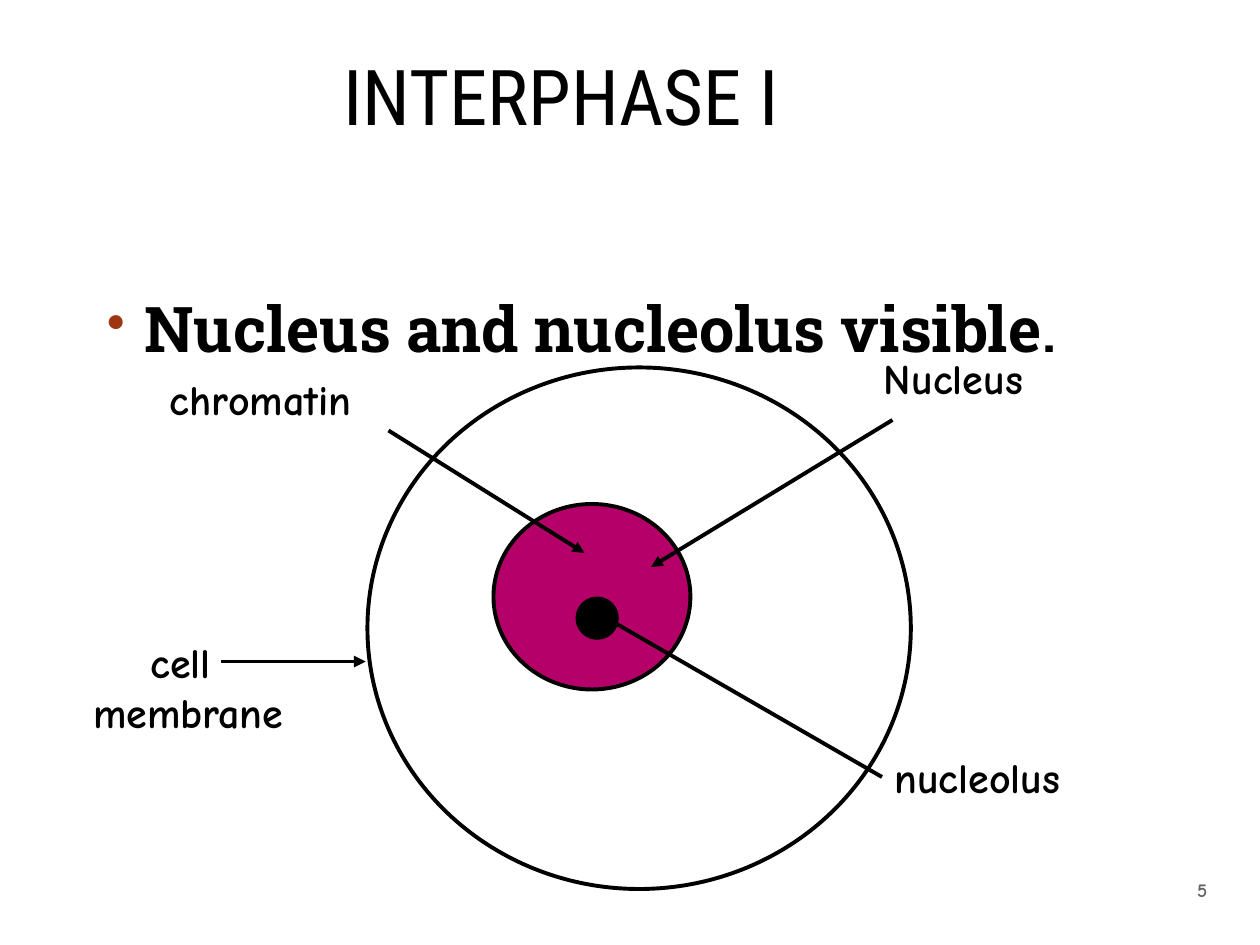
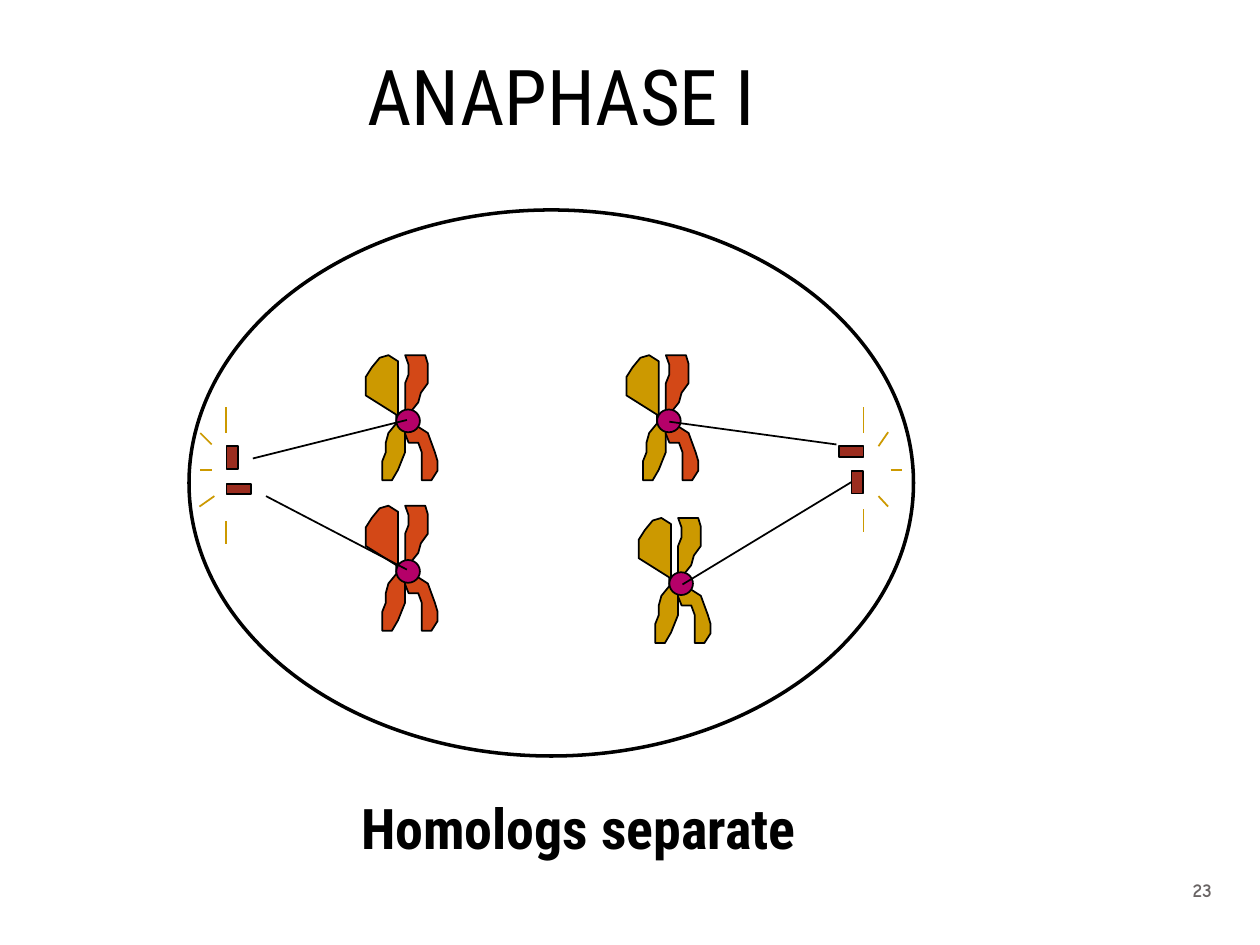
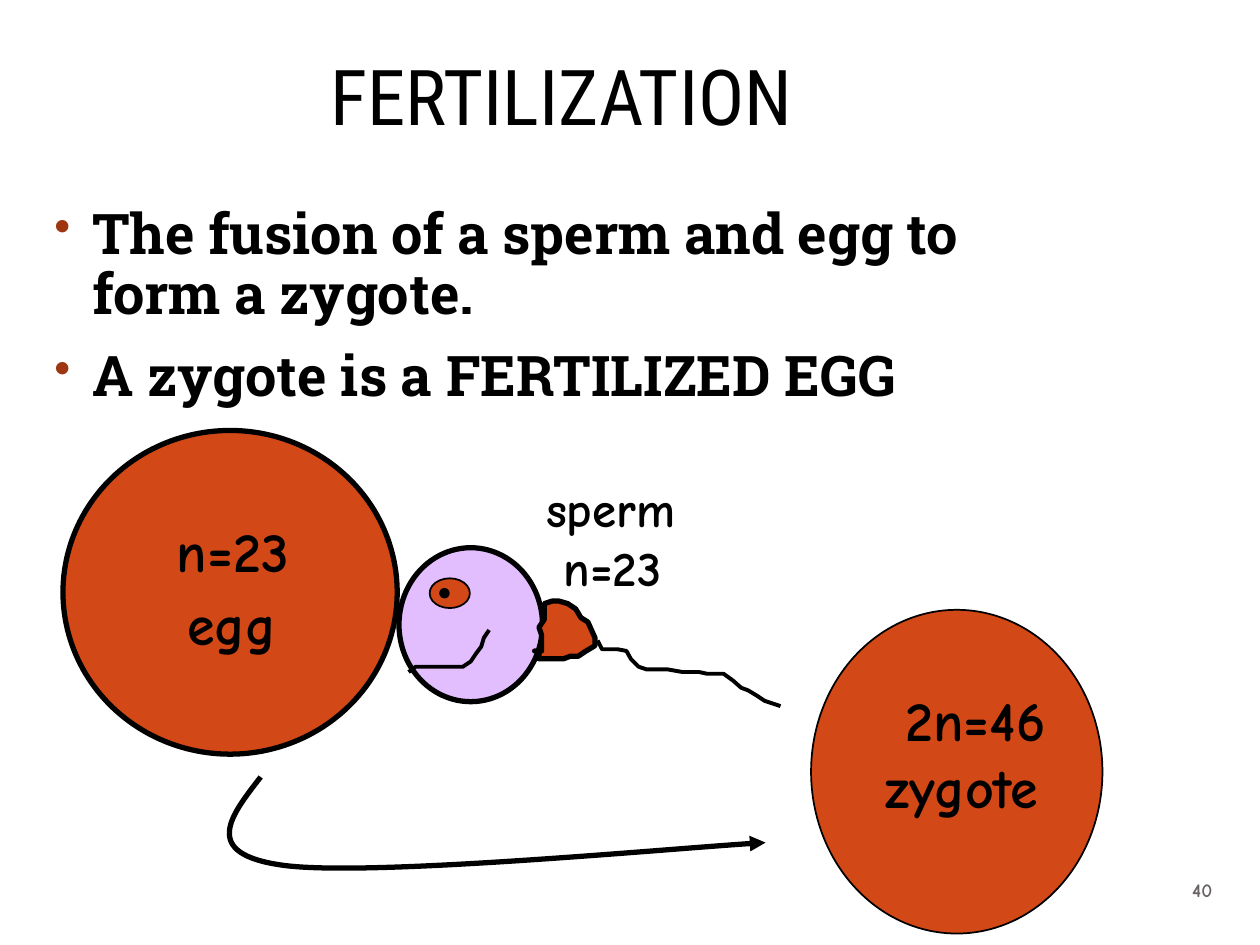
from lxml.etree import SubElement as Sub
from pptx import Presentation
from pptx.dml.color import RGBColor as Rgb
from pptx.enum.shapes import MSO_CONNECTOR as Link, MSO_SHAPE as Kind
from pptx.enum.text import MSO_ANCHOR as Anchor, MSO_AUTO_SIZE as Fit, PP_ALIGN as Align
from pptx.oxml.ns import qn
from pptx.util import Pt

HUES = {
    "black": "000000",
    "white": "FFFFFF",
    "gray": "696464",
    "rust": "9E3611",
    "brick": "9B2D1F",
    "orange": "D34817",
    "gold": "CC9900",
    "plum": "B50069",
    "lilac": "E3BEFF",
}
HEAD, BODY, NOTE = "Roboto Condensed", "Roboto Slab", "Comic Neue"

# Chromatid outlines, measured from the chromosome's top left corner
LEFT = [(24.5, 37.5), (18.5, 35.5), (18.5, 3.5), (13, 0), (8, 1.5), (3.5, 7),
        (0, 12.5), (0, 23), (17.5, 34), (17.5, 39), (13, 44.5), (11.5, 50),
        (11.5, 55.5), (9.5, 60.5), (9.5, 71.5), (15, 71.5), (18.5, 65.5),
        (20.5, 60.5), (22.5, 55.5), (22.5, 39)]
RIGHT = [(24.5, 37.5), (22.5, 32), (22.5, 16), (24.5, 11), (24.5, 5.5),
         (22.5, 0), (34, 0), (35.5, 5), (35.5, 16), (31.5, 21.5), (30, 27),
         (26, 32), (24.5, 37.5), (35.5, 44.5), (37.5, 50), (39.5, 55.5),
         (41, 60.5), (41, 66), (37.5, 71.5), (32, 71.5), (32, 55.5),
         (30, 50), (24.5, 50), (22.5, 45), (22.5, 39)]


def hue(name):
    return Rgb.from_string(HUES[name])


def style(shape, fill, width):
    shape.shadow.inherit = False
    if fill:
        shape.fill.solid()
        shape.fill.fore_color.rgb = hue(fill)
    else:
        shape.fill.background()
    shape.line.color.rgb = hue("black")
    shape.line.width = Pt(width)
    return shape


def add_tip(shape):
    Sub(shape.line._get_or_add_ln(), qn("a:tailEnd"), type="triangle")


def add_dot(para):
    """Give a paragraph a hanging round bullet."""
    props = para._p.get_or_add_pPr()
    props.set("marL", str(Pt(21.6)))
    props.set("indent", str(-Pt(21.6)))
    Sub(Sub(props, qn("a:buClr")), qn("a:srgbClr"), val=HUES["rust"])
    Sub(props, qn("a:buSzPct"), val="85000")
    Sub(props, qn("a:buChar"), char="•")


def add_text(slide, box, lines, face, size, bold=True, color="black",
             align=Align.LEFT, anchor=Anchor.TOP, wrap=True, dots=False,
             space=None):
    frame = slide.shapes.add_textbox(*map(Pt, box)).text_frame
    frame.word_wrap = wrap
    frame.auto_size = Fit.NONE if wrap else Fit.SHAPE_TO_FIT_TEXT
    frame.vertical_anchor = anchor
    for i, line in enumerate(lines):
        para = frame.add_paragraph() if i else frame.paragraphs[0]
        para.text = line
        para.alignment = align
        if space:
            para.line_spacing = space
        if dots:
            if i:
                para.space_before = Pt(12)
            add_dot(para)
        font = para.font
        font.name, font.size, font.bold = face, Pt(size), bold
        font.color.rgb = hue(color)
    return frame


def add_label(slide, box, *lines, size=24, **look):
    add_text(slide, box, lines, NOTE, size, wrap=False, **look)


def add_list(slide, box, lines, size):
    return add_text(slide, box, lines, BODY, size, dots=True, space=0.9)


def add_form(slide, kind, box, fill, width=1):
    return style(slide.shapes.add_shape(kind, *map(Pt, box)), fill, width)


def add_oval(slide, box, fill, width=1):
    return add_form(slide, Kind.OVAL, box, fill, width)


def add_path(slide, dots, fill=None, width=1, at=(0, 0)):
    """Draw an outline through dots; it is closed when it has a fill."""
    spots = [(Pt(x + at[0]), Pt(y + at[1])) for x, y in dots]
    pen = slide.shapes.build_freeform(*spots[0])
    pen.add_line_segments(spots[1:], close=bool(fill))
    return style(pen.convert_to_shape(), fill, width)


def add_curve(slide, dots, width):
    """Draw Bezier curves: a start, then three dots for each curve."""
    shape = add_path(slide, dots, width=width)
    steps = list(shape._element.iter(qn("a:lnTo")))
    for i in range(0, len(steps), 3):
        bend = Sub(steps[i].getparent(), qn("a:cubicBezTo"))
        for step in steps[i:i + 3]:
            bend.append(step[0])
            step.getparent().remove(step)
    return shape


def add_line(slide, ends, color="black", width=1, tip=False):
    line = slide.shapes.add_connector(Link.STRAIGHT, *map(Pt, ends))
    line.line.color.rgb = hue(color)
    line.line.width = Pt(width)
    if tip:
        add_tip(line)
    Sub(line._element.spPr, qn("a:effectLst"))
    return line


def add_pair(slide, x, y, left, right):
    """Draw a chromosome: two chromatids joined by a centromere."""
    add_path(slide, LEFT, left, at=(x, y))
    add_path(slide, RIGHT, right, at=(x, y))
    add_oval(slide, (x + 17.5, y + 31, 13.5, 13), "plum")


def add_page(deck, title, number):
    slide = deck.slides.add_slide(deck.slide_layouts[6])
    add_text(slide, (36, 25, 570, 65), [title], HEAD, 44, bold=False,
             align=Align.CENTER, anchor=Anchor.MIDDLE, space=0.9)
    add_text(slide, (668, 494, 38, 29), [str(number)], NOTE, 11, color="gray",
             align=Align.CENTER, anchor=Anchor.MIDDLE)
    return slide


def draw_inter(deck):
    slide = add_page(deck, "INTERPHASE I", 5)
    frame = add_list(slide, (54, 167, 612, 319),
                     ["Nucleus and nucleolus visible"], 36)
    stop = frame.paragraphs[0].add_run()
    stop.text = "."
    stop.font.size = Pt(30)
    add_oval(slide, (210, 210, 310.5, 298), "white", 2.25)
    add_oval(slide, (282, 288, 112.5, 106), "plum", 2.25)
    add_oval(slide, (330, 342, 22.5, 22.5), "black", 2.25)
    add_label(slide, (498, 198, 157, 36), "Nucleus")
    add_label(slide, (504, 426, 116, 36), "nucleolus")
    add_label(slide, (42, 360, 131, 65.5), "cell \vmembrane", align=Align.CENTER)
    add_label(slide, (90, 210, 128, 36), "chromatin")
    for ends in [(126, 378, 209, 378), (510, 240, 372, 324),
                 (222, 246, 334, 316)]:
        add_line(slide, ends, width=2.25, tip=True)
    add_line(slide, (348, 354, 504, 444), width=2.25)


def draw_ana(deck):
    slide = add_page(deck, "ANAPHASE I", 23)
    add_oval(slide, (108, 120, 414, 312), "white", 2)
    poles = [add_form(slide, Kind.RECTANGLE, box, "brick") for box in [
        (129.5, 255, 6.5, 13), (129.5, 276.5, 14, 6),
        (479.5, 255, 14, 6), (486.5, 269, 6.5, 13)]]
    for ends in [
            (122.5, 283.5, 114, 289.5), (114.5, 268.5, 121, 268.5),
            (114.5, 247.5, 121, 254), (129, 247.5, 129, 232.5),
            (129, 298, 129, 311), (493.5, 247.5, 493.5, 232.5),
            (502, 255, 507.5, 247), (509, 268.5, 515.5, 268.5),
            (502, 283.5, 507.5, 289.5), (493.5, 291, 493.5, 304)]:
        add_line(slide, ends, "gold")
    for x, y, left, right in [
            (209, 203, "gold", "orange"), (358, 203, "gold", "orange"),
            (209, 289, "orange", "orange"), (365, 296, "gold", "gold")]:
        add_pair(slide, x, y, left, right)
    for ends in [(144.5, 262, 232.5, 240), (152, 283.5, 232.5, 325.5),
                 (382.5, 241, 478, 254)]:
        add_line(slide, ends)
    add_line(slide, (390, 334, 486.5, 275.5)).end_connect(poles[3], 1)
    add_text(slide, (48, 450, 558, 46), [" Homologs separate"], HEAD, 32,
             align=Align.CENTER)


def draw_fert(deck):
    slide = add_page(deck, "FERTILIZATION", 40)
    add_list(slide, (24, 114, 588, 366),
             ["The fusion of a sperm and egg to form a zygote.",
              "A zygote is a FERTILIZED EGG"], 32)
    # Egg
    add_oval(slide, (36, 246, 191, 185), "orange", 3)
    add_label(slide, (94, 291.5, 91, 46), "n=23", size=32)
    add_label(slide, (100, 333.5, 67, 46), "egg", size=32)
    # Sperm: head, neck, tail, eye and mouth
    add_oval(slide, (228, 313, 82, 88), "lilac", 3)
    add_label(slide, (305, 270, 99, 74), "sperm", " n=23", size=28)
    add_path(slide, [
        (305.5, 372), (309.5, 372), (309.5, 363), (308, 358.5), (311, 354),
        (311, 345), (315.5, 343.5), (319.5, 343.5), (324.5, 345),
        (329, 348), (332, 353), (336, 355.5), (338, 360), (340, 364.5),
        (340, 369), (335, 372), (330.5, 375), (326, 375), (322, 376.5),
        (308, 376.5), (308, 372)], "orange", 3)
    add_path(slide, [
        (341.5, 366), (344, 371), (353, 371), (358, 372), (360.5, 376.5),
        (365, 381), (369.5, 382.5), (381.5, 382.5), (390, 384),
        (399.5, 384), (404, 385), (413.5, 385), (419, 389), (423.5, 393),
        (427.5, 394.5), (432.5, 397.5), (437, 400.5), (446, 403.5)],
        width=2.25)
    add_oval(slide, (245.5, 330.5, 23, 17), "orange")
    add_path(slide, [
        (233.5, 384), (237.5, 381), (264.5, 381), (269, 378), (272, 373.5),
        (275, 369.5), (276.5, 364.5), (279.5, 360)], width=2.25)
    add_oval(slide, (251.5, 336.5, 5, 5), "black")
    # Zygote
    add_oval(slide, (463.5, 348.5, 166.5, 185), "orange")
    add_label(slide, (499, 388, 108, 85), " 2n=46", "zygote", size=32)
    add_tip(add_curve(slide, [
        (149, 444), (132, 466), (114, 488), (162, 494.5),
        (210, 501), (392, 484), (437.5, 481.5)], 3))


def main():
    deck = Presentation()
    deck.slide_width, deck.slide_height = Pt(720), Pt(540)
    draw_inter(deck)
    draw_ana(deck)
    draw_fert(deck)
    deck.save("out.pptx")


if __name__ == "__main__":
    main()
